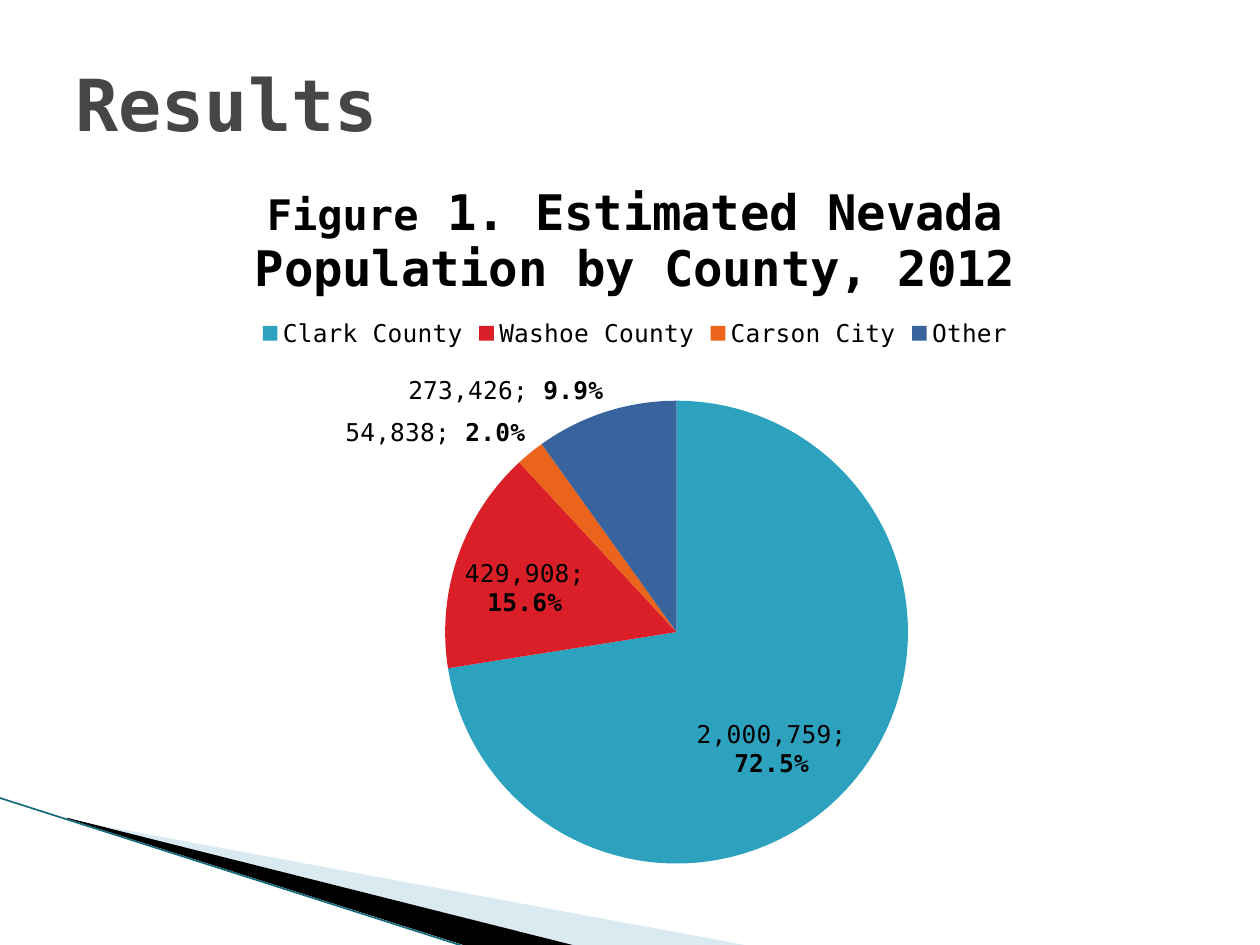
from lxml import etree
from pptx import Presentation
from pptx.chart.data import CategoryChartData
from pptx.dml.color import RGBColor
from pptx.enum.chart import XL_CHART_TYPE, XL_LABEL_POSITION, XL_LEGEND_POSITION
from pptx.enum.shapes import MSO_CONNECTOR
from pptx.enum.text import MSO_ANCHOR
from pptx.oxml import parse_xml
from pptx.oxml.ns import qn
from pptx.util import Pt

PIE = XL_CHART_TYPE.PIE
TOP = XL_LEGEND_POSITION.TOP
INSIDE = XL_LABEL_POSITION.INSIDE_END
OUTSIDE = XL_LABEL_POSITION.OUTSIDE_END
STRAIGHT = MSO_CONNECTOR.STRAIGHT
MIDDLE = MSO_ANCHOR.MIDDLE

FONT = "DejaVu Sans Mono"
BLACK = "000000"
CHART_NS = "http://schemas.openxmlformats.org/drawingml/2006/chart"

# County, share, slice colour, population label, label position
COUNTIES = [
    ("Clark County", 0.725, "2DA2BF", "2,000,759; ", INSIDE),
    ("Washoe County", 0.156, "DA1F28", "429,908; ", INSIDE),
    ("Carson City", 0.02, "EB641B", "54,838; ", OUTSIDE),
    ("Other", 0.099, "39639D", "273,426; ", OUTSIDE),
]
PLOT_LAYOUT = {"x": 0.34, "y": 0.326, "w": 0.39, "h": 0.621}


def color(value):
    return RGBColor.from_string(value)


def style_font(font, size, fill=BLACK, bold=False):
    for name, value in {"name": FONT, "size": Pt(size), "bold": bold}.items():
        setattr(font, name, value)
    font.color.rgb = color(fill)


def add_span(para, text, size, fill=BLACK, bold=False):
    span = para.add_run()
    span.text = text
    style_font(span.font, size, fill, bold)


def add_wedge(page, points, fill, alpha=None):
    corners = [(Pt(x), Pt(y)) for x, y in points]
    builder = page.shapes.build_freeform(*corners[0], scale=1.0)
    builder.add_line_segments(corners[1:], close=True)
    wedge = builder.convert_to_shape()
    wedge.shadow.inherit = False
    wedge.fill.solid()
    wedge.fill.fore_color.rgb = color(fill)
    wedge.line.fill.background()
    if alpha is not None:
        tint = wedge.fill._xPr.find(".//" + qn("a:srgbClr"))
        etree.SubElement(tint, qn("a:alpha")).set("val", str(alpha * 1000))


def add_line(page, start, end, fill, width):
    line = page.shapes.add_connector(STRAIGHT, *map(Pt, start + end))
    line.line.color.rgb = color(fill)
    line.line.width = Pt(width)
    etree.SubElement(line._element.spPr, qn("a:effectLst"))


def add_title(page, text):
    box = page.shapes.add_textbox(Pt(36), Pt(21.6), Pt(648), Pt(74.2))
    frame = box.text_frame
    frame.word_wrap = True
    frame.vertical_anchor = MIDDLE
    add_span(frame.paragraphs[0], text, 41, "464646", True)


def place_plot(chart):
    plot_area = chart._chartSpace.chart.plotArea
    for old in plot_area.findall(qn("c:layout")):
        plot_area.remove(old)
    settings = {"layoutTarget": "inner", "xMode": "edge", "yMode": "edge", **PLOT_LAYOUT}
    parts = "".join(f'<c:{name} val="{value}"/>' for name, value in settings.items())
    plot_area.insert(0, parse_xml(
        f'<c:layout xmlns:c="{CHART_NS}"><c:manualLayout>{parts}</c:manualLayout></c:layout>'))


def add_pie(page):
    data = CategoryChartData(number_format="0.0%")
    data.categories = [county[0] for county in COUNTIES]
    data.add_series("Series 1", [county[1] for county in COUNTIES])
    chart = page.shapes.add_chart(
        PIE, Pt(23.8), Pt(90), Pt(678.2), Pt(426.2), data).chart
    style_font(chart.font, 10)

    # Figure title and legend
    chart.has_title = True
    para = chart.chart_title.text_frame.paragraphs[0]
    add_span(para, "Figure", 24, bold=True)
    add_span(para, " 1. Estimated Nevada Population by County, 2012", 28, bold=True)
    chart.has_legend = True
    chart.legend.position = TOP
    chart.legend.include_in_layout = False
    style_font(chart.legend.font, 14)

    # Slices and their labels
    plot = chart.plots[0]
    plot.vary_by_categories = True
    series = plot.series[0]
    labels = series.data_labels
    labels.show_value = True
    labels.number_format = "0.0%"
    labels.number_format_is_linked = False
    style_font(labels.font, 14)
    for index, (_, share, fill, population, position) in enumerate(COUNTIES):
        point = series.points[index]
        point.format.fill.solid()
        point.format.fill.fore_color.rgb = color(fill)
        point.format.line.fill.background()
        para = point.data_label.text_frame.paragraphs[0]
        add_span(para, population, 14)
        add_span(para, f"{share:.1%}", 14, bold=True)
        point.data_label.position = position
    place_plot(chart)


def main():
    deck = Presentation()
    deck.slide_width, deck.slide_height = Pt(720), Pt(540)
    page = deck.slides.add_slide(deck.slide_layouts[6])

    # Corner decoration
    add_wedge(page, [(39.6, 468.5), (428.4, 540.5), (328.3, 540.5), (39.6, 468)], "A0CBDC", 40)
    add_wedge(page, [(38.2, 467.3), (329, 540.5), (267.8, 541), (38.9, 468)], BLACK)
    add_line(page, (-0.7, 455.8), (267.1, 541.4), "17697C", 0.95)

    # Content
    add_pie(page)
    add_title(page, "Results")
    deck.save("out.pptx")


if __name__ == "__main__":
    main()
